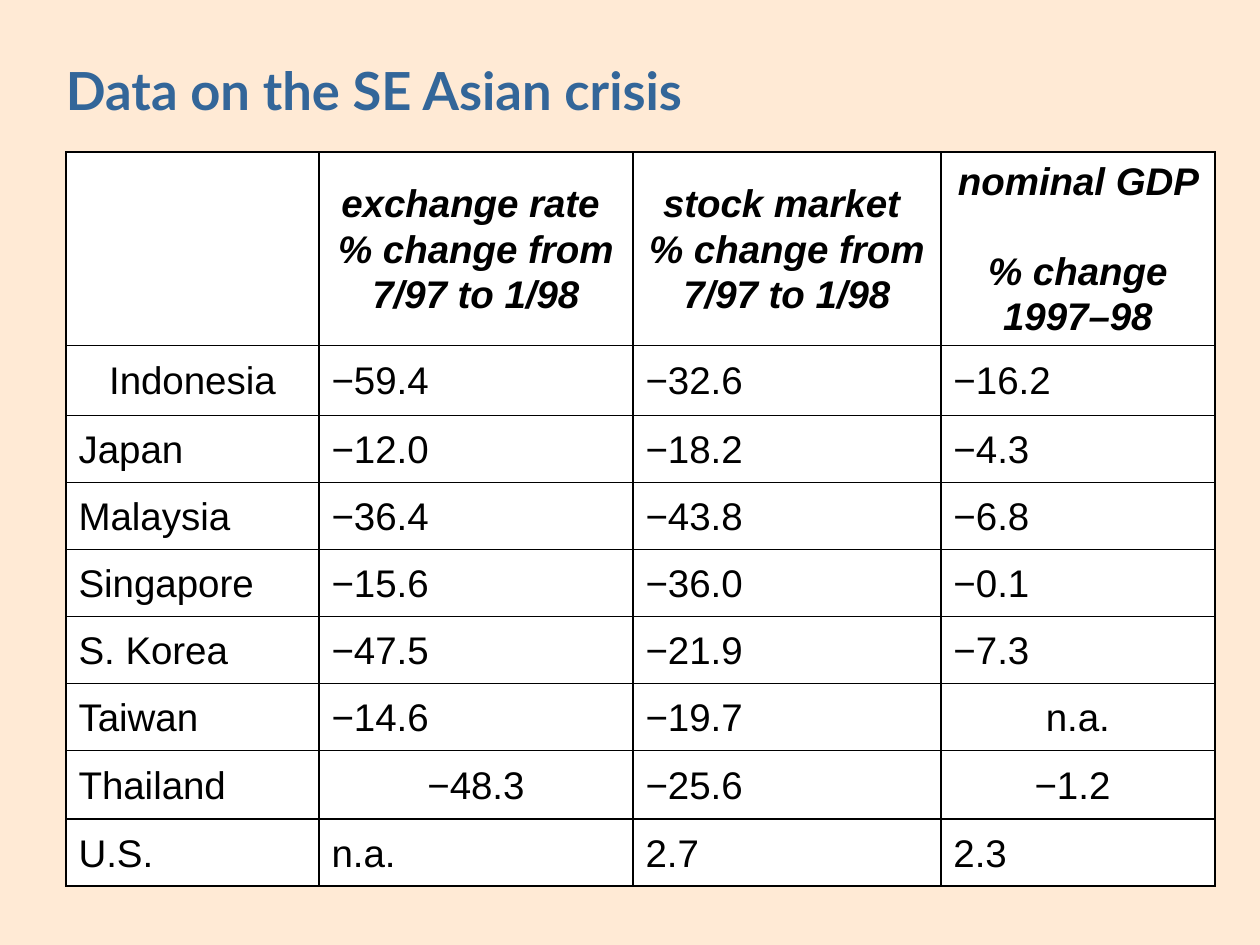
import pptx
import pptx.dml.color
import pptx.enum.text
import pptx.oxml
import pptx.oxml.ns
import pptx.util

PX = 914400 / 126
COLUMN_WIDTHS = [253, 314, 308, 274]
ROW_HEIGHTS = [171, 70, 67, 67, 67, 67, 67, 69, 67]
HEADINGS = [
    "",
    "exchange rate \v% change from 7/97 to 1/98",
    "stock market \v% change from 7/97 to 1/98",
    "nominal GDP \v% change 1997–98",
]
COUNTRIES = [
    ["Indonesia", "−59.4", "−32.6", "−16.2"],
    ["Japan", "−12.0", "−18.2", "−4.3"],
    ["Malaysia", "−36.4", "−43.8", "−6.8"],
    ["Singapore", "−15.6", "−36.0", "−0.1"],
    ["S. Korea", "−47.5", "−21.9", "−7.3"],
    ["Taiwan", "−14.6", "−19.7", "n.a."],
    ["Thailand", "−48.3", "−25.6", "−1.2 "],
    ["U.S.", "n.a.", "2.7", "2.3"],
]
CENTRED_ENTRIES = {(1, 0), (6, 3), (7, 1), (7, 3)}
MIDDLE = pptx.enum.text.MSO_ANCHOR.MIDDLE
ALIGN = pptx.enum.text.PP_ALIGN


def px(length):
    """Turn whole pixels into EMU."""
    return pptx.util.Emu(round(length * PX))


def paint(target, colour):
    """Give a fill a solid hex colour."""
    target.solid()
    target.fore_color.rgb = pptx.dml.color.RGBColor.from_string(colour)


def style(paragraph, face, size, colour, align, bold=False, italic=False):
    """Format a paragraph."""
    paragraph.alignment = align
    paragraph.line_spacing = 1.05
    font = paragraph.font
    font.name, font.size = face, pptx.util.Pt(size)
    font.bold, font.italic = bold, italic
    paint(font.fill, colour)


def add_borders(cell, colour):
    """Draw a one-point line on all four sides of a cell."""
    properties = cell._tc.get_or_add_tcPr()
    for position, side in enumerate(("lnL", "lnR", "lnT", "lnB")):
        properties.insert(position, pptx.oxml.parse_xml(
            f'<a:{side} {pptx.oxml.ns.nsdecls("a")} w="12700"><a:solidFill>'
            f'<a:srgbClr val="{colour}"/></a:solidFill></a:{side}>'))


def add_title(slide, text):
    """Place and format the slide title."""
    title = slide.shapes.title
    title.left, title.top, title.width, title.height = map(px, (66, 28, 1138, 120))
    frame = title.text_frame
    frame.text = text
    frame.margin_left = frame.margin_right = 0
    frame.margin_top = frame.margin_bottom = 0
    frame.vertical_anchor = MIDDLE
    style(frame.paragraphs[0], "Lato", 30, "336699", ALIGN.LEFT, bold=True)


def fill_cell(cell, text, heading, centred):
    """Write and format one table cell."""
    paint(cell.fill, "FFFFFF")
    add_borders(cell, "000000")
    cell.vertical_anchor = MIDDLE
    cell.text = text
    style(cell.text_frame.paragraphs[0], "Arial", 22, "000000",
          ALIGN.CENTER if centred else ALIGN.LEFT, bold=heading, italic=heading)


def add_crisis_table(slide):
    """Add the table of changes by country."""
    entries = [HEADINGS] + COUNTRIES
    table = slide.shapes.add_table(
        len(entries), len(HEADINGS), px(66), px(152),
        px(sum(COLUMN_WIDTHS)), px(sum(ROW_HEIGHTS))).table
    for column, width in zip(table.columns, COLUMN_WIDTHS):
        column.width = px(width)
    for row, height in zip(table.rows, ROW_HEIGHTS):
        row.height = px(height)
    for r, texts in enumerate(entries):
        for c, text in enumerate(texts):
            heading = r == 0
            fill_cell(table.cell(r, c), text, heading,
                      heading or (r, c) in CENTRED_ENTRIES)


def main():
    """Build and save the slide."""
    presentation = pptx.Presentation()
    presentation.slide_width, presentation.slide_height = px(1260), px(945)
    slide = presentation.slides.add_slide(presentation.slide_layouts[5])
    paint(slide.background.fill, "FFEAD5")
    add_title(slide, "Data on the SE Asian crisis")
    add_crisis_table(slide)
    presentation.save("out.pptx")


if __name__ == "__main__":
    main()
